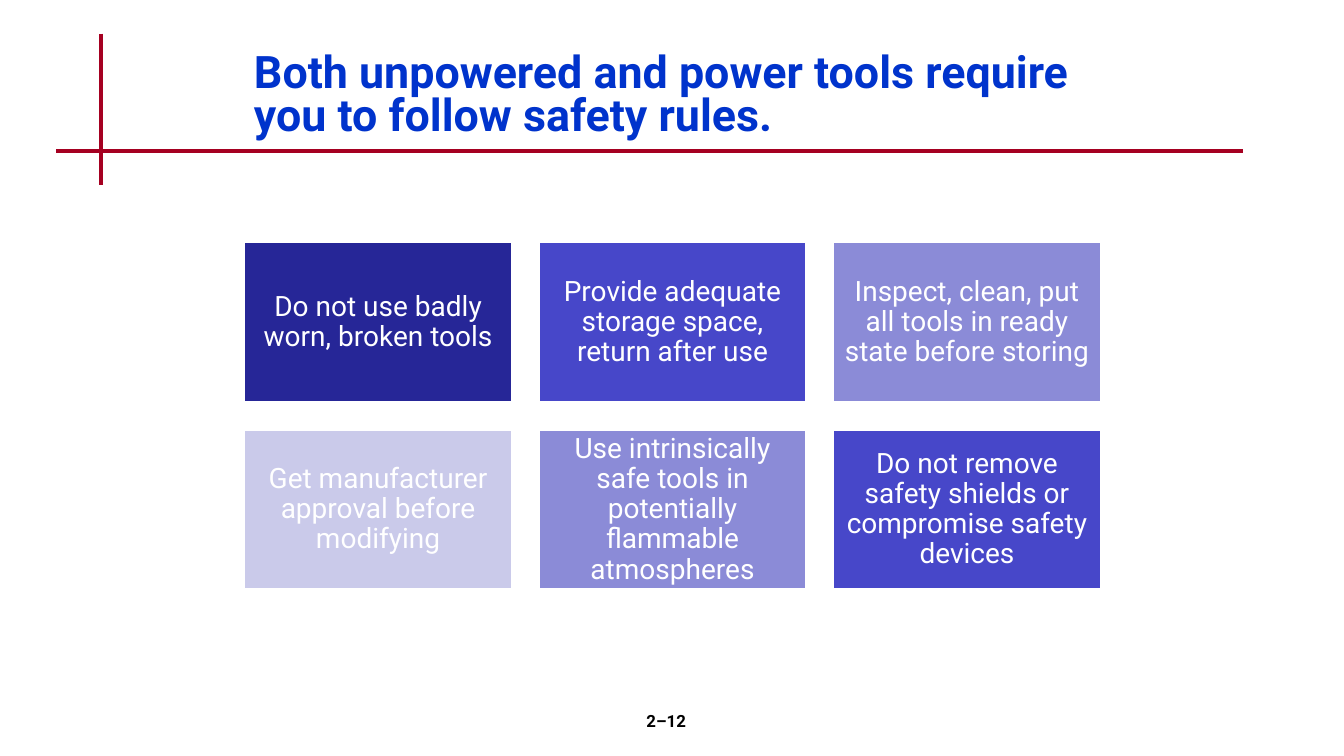
"""Build the slide on safety rules for unpowered and power tools."""
import pptx
import pptx.dml.color
import pptx.enum.shapes
import pptx.enum.text
import pptx.oxml
import pptx.oxml.ns
import pptx.util

Cm = pptx.util.Cm
Pt = pptx.util.Pt
RGBColor = pptx.dml.color.RGBColor
PP_ALIGN = pptx.enum.text.PP_ALIGN
MSO_ANCHOR = pptx.enum.text.MSO_ANCHOR

WHITE = RGBColor(0xFF, 0xFF, 0xFF)
BLACK = RGBColor(0x00, 0x00, 0x00)
TITLE_BLUE = RGBColor(0x00, 0x33, 0xCC)
RULE_RED = RGBColor(0xA5, 0x00, 0x21)
NAVY = RGBColor(0x26, 0x26, 0x97)
INDIGO = RGBColor(0x47, 0x47, 0xC9)
LAVENDER = RGBColor(0x8B, 0x8B, 0xD7)
PALE = RGBColor(0xCA, 0xCA, 0xEA)

RULES = [
    ("Do not use badly worn, broken tools", NAVY),
    ("Provide adequate storage space, return after use", INDIGO),
    ("Inspect, clean, put all tools in ready state before storing", LAVENDER),
    ("Get manufacturer approval before modifying", PALE),
    ("Use intrinsically safe tools in potentially flammable atmospheres", LAVENDER),
    ("Do not remove safety shields or compromise safety devices", INDIGO),
]
COLUMNS = 3
GRID_LEFT, GRID_TOP = 6.15, 6.1
CARD_WIDTH, CARD_HEIGHT = 6.76, 4.04
COLUMN_STEP, ROW_STEP = 7.42, 4.72


def set_text(sp, text, size, color, bold, align, anchor, spacing):
    tf = sp.text_frame
    tf.word_wrap = True
    tf.vertical_anchor = anchor
    tf.text = text
    p = tf.paragraphs[0]
    p.alignment = align
    p.line_spacing = spacing
    r = p.runs[0]
    r.font.name = "Roboto"
    r.font.size = Pt(size)
    r.font.bold = bold
    r.font.color.rgb = color


prs = pptx.Presentation()
prs.slide_width = Cm(33.87)
prs.slide_height = Cm(19.05)
s = prs.slides.add_slide(prs.slide_layouts[6])

for x1, y1, x2, y2 in [(2.54, 0.85, 2.54, 4.66), (1.42, 3.81, 31.33, 3.81)]:
    line = s.shapes.add_connector(
        pptx.enum.shapes.MSO_CONNECTOR.STRAIGHT, Cm(x1), Cm(y1), Cm(x2), Cm(y2))
    line.line.color.rgb = RULE_RED
    line.line.width = Pt(3)
    line._element.spPr.append(
        pptx.oxml.parse_xml("<a:effectLst %s/>" % pptx.oxml.ns.nsdecls("a")))

title = s.shapes.add_textbox(Cm(GRID_LEFT), Cm(0.85), Cm(23.06), Cm(3.18))
set_text(title, "Both unpowered and power tools require you to follow safety rules.",
         32, TITLE_BLUE, True, PP_ALIGN.LEFT, MSO_ANCHOR.MIDDLE, 0.8)

number = s.shapes.add_textbox(Cm(13.26), Cm(17.78), Cm(7.06), Cm(1.27))
set_text(number, "2–12", 12, BLACK, True, PP_ALIGN.CENTER, MSO_ANCHOR.TOP, 1.0)

for i, (rule, color) in enumerate(RULES):
    row, column = divmod(i, COLUMNS)
    sp = s.shapes.add_shape(
        pptx.enum.shapes.MSO_SHAPE.RECTANGLE,
        Cm(GRID_LEFT + column * COLUMN_STEP), Cm(GRID_TOP + row * ROW_STEP),
        Cm(CARD_WIDTH), Cm(CARD_HEIGHT))
    sp.shadow.inherit = False
    sp.fill.solid()
    sp.fill.fore_color.rgb = color
    sp.line.color.rgb = WHITE
    sp.line.width = Pt(2)
    tf = sp.text_frame
    tf.margin_left = tf.margin_right = tf.margin_top = tf.margin_bottom = Cm(0.2)
    set_text(sp, rule, 20, WHITE, False, PP_ALIGN.CENTER, MSO_ANCHOR.MIDDLE, 0.9)

prs.save("out.pptx")
